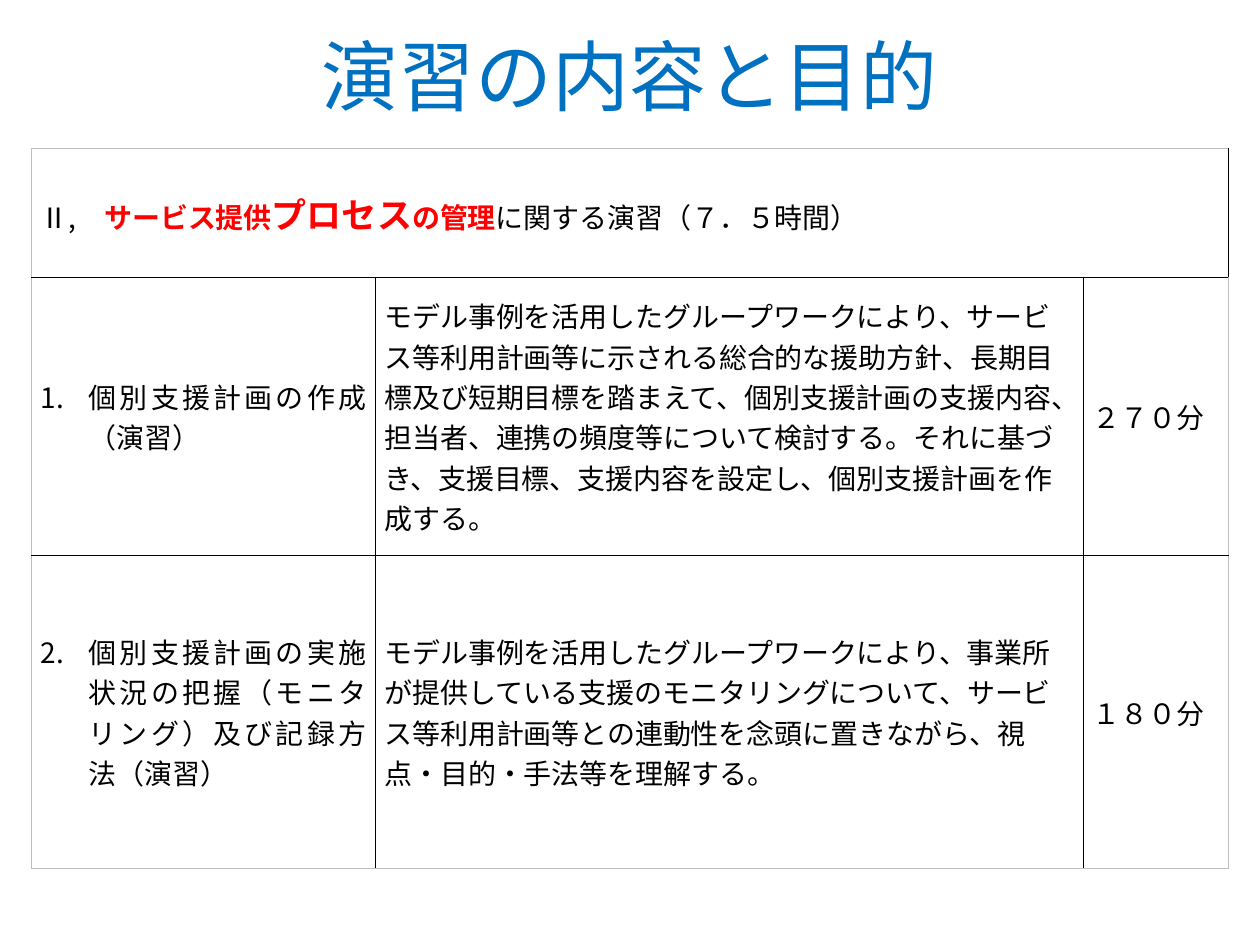
from dataclasses import dataclass

from lxml import etree
from pptx import Presentation
from pptx.dml.color import RGBColor
from pptx.enum import text
from pptx.oxml import ns
from pptx.util import Cm, Pt


@dataclass(frozen=True)
class Theme:
    font: str = "Noto Sans CJK JP"
    title: str = "0070C0"
    body: str = "000000"
    accent: str = "FF0000"
    paper: str = "FFFFFF"
    rule: str = "000000"
    frame: str = "BFBFBF"
    title_size: int = 44
    body_size: int = 16
    accent_size: int = 20
    rule_width: float = 1
    frame_width: float = 0.5


THEME = Theme()
COLUMNS = (6.93, 14.27, 2.93)
ROWS = (2.59, 5.61, 6.3)
HEADING = (
    ("Ⅱ,　", {}),
    ("サービス提供", {"color": THEME.accent, "bold": True}),
    ("プロセス", {"color": THEME.accent, "bold": True, "size": THEME.accent_size}),
    ("の管理", {"color": THEME.accent, "bold": True}),
    ("に関する演習（７．５時間）", {}),
)
EXERCISES = (
    (
        "個別支援計画の作成（演習）",
        "モデル事例を活用したグループワークにより、サービス等利用計画等に示される総合的な援助方針、"
        "長期目標及び短期目標を踏まえて、個別支援計画の支援内容、担当者、連携の頻度等について検討する。"
        "それに基づき、支援目標、支援内容を設定し、個別支援計画を作成する。",
        "２７０分",
    ),
    (
        "個別支援計画の実施状況の把握（モニタリング）及び記録方法（演習）",
        "モデル事例を活用したグループワークにより、事業所が提供している支援のモニタリングについて、"
        "サービス等利用計画等との連動性を念頭に置きながら、視点・目的・手法等を理解する。",
        "１８０分",
    ),
)


def add_span(para, words, size=THEME.body_size, color=THEME.body, bold=False):
    span = para.add_run()
    span.text = words
    span.font.size = Pt(size)
    span.font.bold = bold
    span.font.name = THEME.font
    span.font.color.rgb = RGBColor.from_string(color)
    east_asian = etree.SubElement(span.font._element, ns.qn("a:ea"))
    east_asian.set("typeface", THEME.font)


def number_para(para, number):
    para.alignment = text.PP_ALIGN.JUSTIFY
    properties = para._p.get_or_add_pPr()
    properties.set("marL", str(Cm(0.97)))
    properties.set("indent", str(-Cm(0.97)))
    bullet = etree.SubElement(properties, ns.qn("a:buAutoNum"))
    bullet.set("type", "arabicPeriod")
    bullet.set("startAt", str(number))


def set_borders(cell, row, column):
    outer = {
        "lnL": column == 0,
        "lnR": column == len(COLUMNS) - 1,
        "lnT": row == 0,
        "lnB": row == len(ROWS) - 1,
    }
    properties = cell._tc.get_or_add_tcPr()
    for position, (side, is_outer) in enumerate(outer.items()):
        line = etree.Element(ns.qn(f"a:{side}"))
        line.set("w", str(Pt(THEME.frame_width if is_outer else THEME.rule_width)))
        fill = etree.SubElement(line, ns.qn("a:solidFill"))
        color = etree.SubElement(fill, ns.qn("a:srgbClr"))
        color.set("val", THEME.frame if is_outer else THEME.rule)
        properties.insert(position, line)


def format_cell(cell, row, column):
    cell.vertical_anchor = text.MSO_ANCHOR.MIDDLE
    cell.margin_left = cell.margin_right = Cm(0.18)
    cell.margin_top = cell.margin_bottom = 0
    cell.fill.solid()
    cell.fill.fore_color.rgb = RGBColor.from_string(THEME.paper)
    set_borders(cell, row, column)


def place_title(page, left, top, width, height):
    title = page.shapes.title
    title.left, title.top, title.width, title.height = left, top, width, height
    frame = title.text_frame
    frame.auto_size = text.MSO_AUTO_SIZE.NONE
    frame.vertical_anchor = text.MSO_ANCHOR.BOTTOM
    para = frame.paragraphs[0]
    para.alignment = text.PP_ALIGN.CENTER
    para.line_spacing = 0.9
    add_span(para, "演習の内容と目的", THEME.title_size, THEME.title)


def place_schedule(page, left, top, width, height):
    box = page.shapes.add_table(len(ROWS), len(COLUMNS), left, top, width, height)
    table = box.table
    table.first_row = table.horz_banding = False
    for column, share in zip(table.columns, COLUMNS):
        column.width = round(width * share / sum(COLUMNS))
    for row, share in zip(table.rows, ROWS):
        row.height = round(height * share / sum(ROWS))
    for row in range(len(ROWS)):
        for column in range(len(COLUMNS)):
            format_cell(table.cell(row, column), row, column)

    heading = table.cell(0, 0)
    heading.merge(table.cell(0, len(COLUMNS) - 1))
    for words, style in HEADING:
        add_span(heading.text_frame.paragraphs[0], words, **style)

    for number, exercise in enumerate(EXERCISES, start=1):
        for column, words in enumerate(exercise):
            para = table.cell(number, column).text_frame.paragraphs[0]
            if column == 0:
                number_para(para, number)
            add_span(para, words)


def main():
    deck = Presentation()
    deck.slide_width, deck.slide_height = Cm(25.4), Cm(19.05)
    page = deck.slides.add_slide(deck.slide_layouts.get_by_name("Title Only"))
    place_title(page, Cm(1.75), Cm(1.02), Cm(21.9), Cm(1.57))
    place_schedule(page, Cm(0.64), Cm(3), Cm(sum(COLUMNS)), Cm(sum(ROWS)))
    deck.save("out.pptx")


if __name__ == "__main__":
    main()
